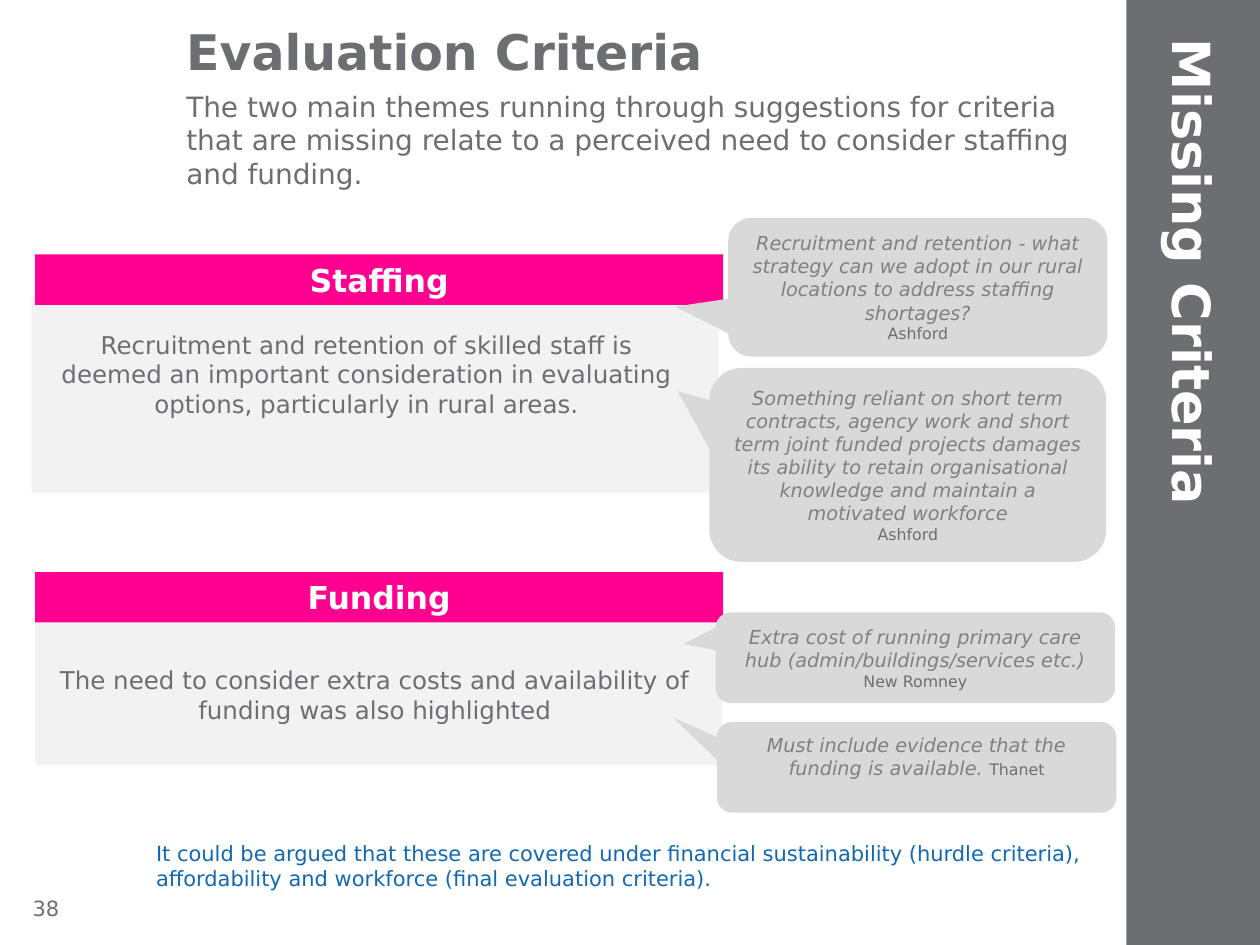
from dataclasses import dataclass

import pptx
import pptx.dml.color
import pptx.enum.shapes
import pptx.enum.text
import pptx.util

RGBColor = pptx.dml.color.RGBColor
Inches = pptx.util.Inches
Pt = pptx.util.Pt
Kind = pptx.enum.shapes.MSO_SHAPE
Align = pptx.enum.text.PP_ALIGN
Anchor = pptx.enum.text.MSO_ANCHOR

FONT = "DejaVu Sans"
SLATE = RGBColor(0x6D, 0x6E, 0x71)
WHITE = RGBColor(0xFF, 0xFF, 0xFF)
PINK = RGBColor(0xFF, 0x00, 0x90)
PALE = RGBColor(0xF2, 0xF2, 0xF2)
SILVER = RGBColor(0xD9, 0xD9, 0xD9)
GREY = RGBColor(0x80, 0x80, 0x80)
BLUE = RGBColor(0x12, 0x68, 0xB3)

Box = tuple[float, float, float, float]


@dataclass
class Theme:
    title: str
    text: str
    top: float
    panel: Box
    body: Box


@dataclass
class Quote:
    text: str
    place: str
    box: Box
    tip: tuple[float, float]
    inline: bool = False  # place follows the quote on the same line
    foot: float = 0.05


THEMES = [
    Theme("Staffing",
          "Recruitment and retention of skilled staff is deemed an important "
          "consideration in evaluating options, particularly in rural areas.",
          2.02, (0.25, 2.35, 5.45, 1.56), (0.34, 2.57, 5.14, 0.81)),
    Theme("Funding",
          "The need to consider extra costs and availability of funding was "
          "also highlighted",
          4.54, (0.28, 4.68, 5.45, 1.39), (0.28, 5.23, 5.39, 0.57)),
]

QUOTES = [
    Quote("Recruitment and retention - what strategy can we adopt in our rural "
          "locations to address staffing shortages?",
          "Ashford", (5.78, 1.73, 3.01, 1.1), (0.64, 0.14)),
    Quote("Something reliant on short term contracts, agency work and short "
          "term joint funded projects damages its ability to retain "
          "organisational knowledge and maintain a motivated workforce",
          "Ashford", (5.63, 2.92, 3.15, 1.54), (0.58, -0.38)),
    Quote("Extra cost of running primary care hub "
          "(admin/buildings/services etc.)",
          "New Romney", (5.68, 4.86, 3.17, 0.72), (0.58, -0.15)),
    Quote("Must include evidence that the funding is available. ",
          "Thanet", (5.69, 5.73, 3.17, 0.72), (0.61, -0.55), True, 0.22),
]


def style(run, size: float, color: RGBColor, bold=False, slant=False) -> None:
    font = run.font
    font.name, font.size, font.bold, font.italic = FONT, Pt(size), bold, slant
    font.color.rgb = color


def fill_text(shape, text: str, size: float, color: RGBColor,
              bold=False, align=Align.LEFT, anchor=Anchor.TOP):
    frame = shape.text_frame
    frame.word_wrap = True
    frame.vertical_anchor = anchor
    frame.text = text
    para = frame.paragraphs[0]
    para.alignment = align
    style(para.runs[0], size, color, bold)
    return para


def add_label(slide, box: Box, text: str, size: float, color: RGBColor,
              **look):
    shape = slide.shapes.add_textbox(*map(Inches, box))
    fill_text(shape, text, size, color, **look)
    return shape


def add_block(slide, box: Box, color: RGBColor, kind=Kind.RECTANGLE):
    shape = slide.shapes.add_shape(kind, *map(Inches, box))
    shape.shadow.inherit = False
    shape.fill.solid()
    shape.fill.fore_color.rgb = color
    shape.line.fill.background()
    return shape


def add_theme(slide, theme: Theme) -> None:
    add_block(slide, theme.panel, PALE)
    add_label(slide, theme.body, theme.text, 14, SLATE, align=Align.CENTER)
    head = add_block(slide, (0.28, theme.top, 5.46, 0.4), PINK)
    fill_text(head, theme.title, 18, WHITE, bold=True, align=Align.CENTER)


def add_quote(slide, quote: Quote) -> None:
    shape = add_block(slide, quote.box, SILVER, Kind.ROUNDED_RECTANGULAR_CALLOUT)
    shape.element.spPr.xfrm.set("flipH", "1")
    shape.adjustments[0], shape.adjustments[1] = quote.tip
    para = fill_text(shape, quote.text, 11, GREY, align=Align.CENTER,
                     anchor=Anchor.MIDDLE)
    para.runs[0].font.italic = True
    frame = shape.text_frame
    frame.margin_bottom = Inches(quote.foot)
    if not quote.inline:
        para = frame.add_paragraph()
        para.alignment = Align.CENTER
    run = para.add_run()
    run.text = quote.place
    style(run, 9, SLATE)


def main() -> None:
    deck = pptx.Presentation()
    deck.slide_width, deck.slide_height = Inches(10), Inches(7.5)
    slide = deck.slides.add_slide(deck.slide_layouts[6])

    # Side band with its turned title
    add_block(slide, (8.94, 0, 1.06, 7.5), SLATE)
    side = add_label(slide, (6.22, 3.08, 6.61, 0.87), "Missing Criteria", 30,
                     WHITE, bold=True, anchor=Anchor.MIDDLE)
    side.rotation = 90
    para = side.text_frame.paragraphs[0]
    para.line_spacing = 1.2
    para.space_before = para.space_after = Pt(6)

    # Page number
    add_label(slide, (0.16, 7.06, 0.75, 0.31), "38", 12, SLATE)

    # Themes, then the quotes that overlap them
    for theme in THEMES:
        add_theme(slide, theme)
    for quote in QUOTES:
        add_quote(slide, quote)

    # Heading, introduction and closing remark
    add_label(slide, (1.38, 0.12, 6.14, 0.57), "Evaluation Criteria", 28,
              SLATE, bold=True)
    add_label(slide, (1.38, 0.66, 7.32, 0.91),
              "The two main themes running through suggestions for criteria "
              "that are missing relate to a perceived need to consider "
              "staffing and funding.", 16, SLATE)
    add_label(slide, (1.14, 6.62, 7.56, 0.5),
              "It could be argued that these are covered under financial "
              "sustainability (hurdle criteria), affordability and workforce "
              "(final evaluation criteria).", 12, BLUE)

    deck.save("out.pptx")


if __name__ == "__main__":
    main()
